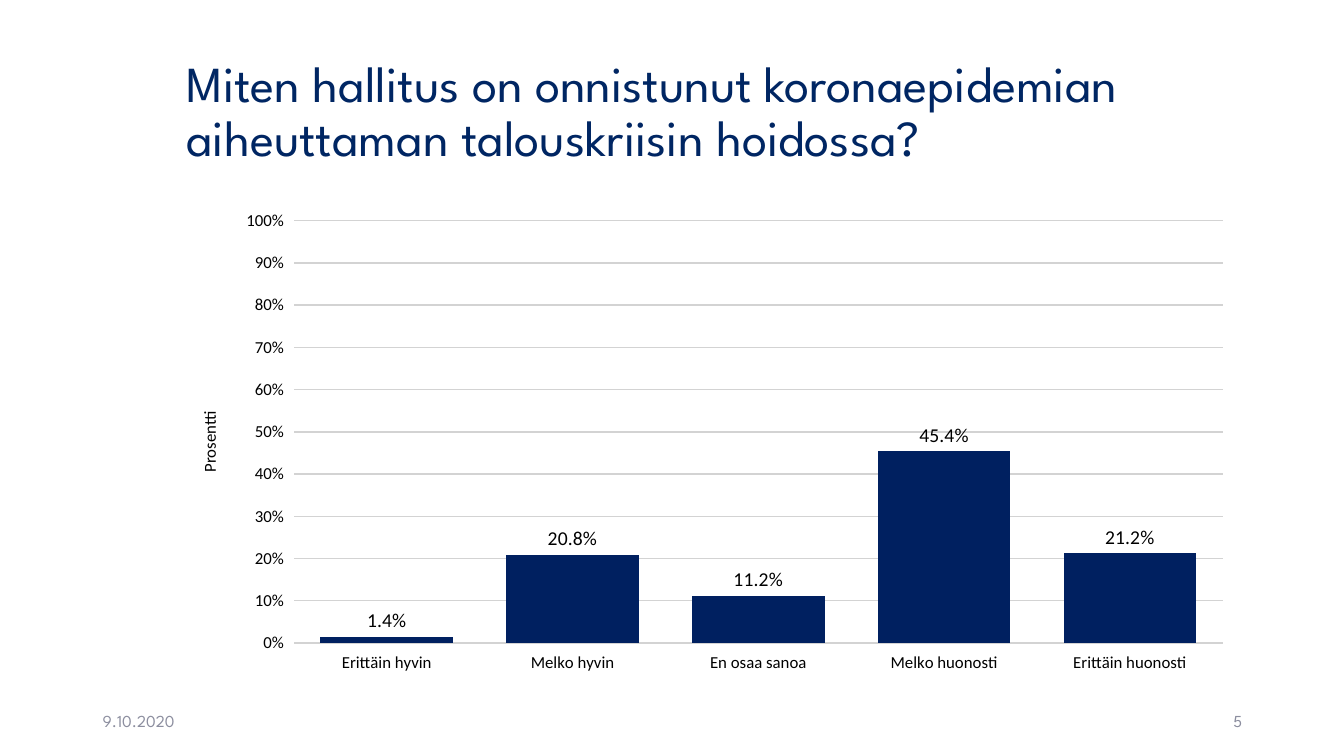
from lxml import etree
from pptx import Presentation
from pptx.chart.data import CategoryChartData
from pptx.dml.color import RGBColor
from pptx.enum import chart as charts, text as texts
from pptx.oxml import ns
from pptx.util import Inches, Pt

HEADING_FONT, CHART_FONT = "League Spartan", "Calibri"
NAVY, BAR, GREY, GRID, BLACK, WHITE = (
    "002663", "002060", "8C8E9F", "D3D3D3", "000000", "FFFFFF")
RATINGS = {
    "Erittäin hyvin": 0.014,
    "Melko hyvin": 0.208,
    "En osaa sanoa": 0.112,
    "Melko huonosti": 0.454,
    "Erittäin huonosti": 0.212,
}


def color(hex_code):
    return RGBColor.from_string(hex_code)


def style(font, size, hex_code=BLACK, name=CHART_FONT):
    font.name, font.size, font.bold = name, Pt(size), False
    font.color.rgb = color(hex_code)


def add_text(slide, box, content, size, hex_code,
             align=texts.PP_ALIGN.LEFT, line_spacing=1.0):
    shape = slide.shapes.add_textbox(*map(Inches, box))
    frame = shape.text_frame
    frame.word_wrap = True
    frame.vertical_anchor = texts.MSO_ANCHOR.MIDDLE
    paragraph = frame.paragraphs[0]
    paragraph.alignment, paragraph.line_spacing = align, line_spacing
    run = paragraph.add_run()
    run.text = content
    style(run.font, size, hex_code, HEADING_FONT)


def set_plot_area(chart, **fractions):
    """Fix the inner plot at fractions of the chart and fill it white."""
    plot_area = chart._chartSpace.chart.plotArea
    for old in plot_area.findall(ns.qn("c:layout")):
        plot_area.remove(old)
    layout = etree.Element(ns.qn("c:layout"))
    plot_area.insert(0, layout)
    manual = etree.SubElement(layout, ns.qn("c:manualLayout"))
    settings = {"layoutTarget": "inner", "xMode": "edge", "yMode": "edge", **fractions}
    for tag, value in settings.items():
        etree.SubElement(manual, ns.qn(f"c:{tag}"), val=str(value))
    properties = etree.SubElement(plot_area, ns.qn("c:spPr"))
    fill = etree.SubElement(properties, ns.qn("a:solidFill"))
    etree.SubElement(fill, ns.qn("a:srgbClr"), val=WHITE)


def add_rating_chart(slide, box):
    data = CategoryChartData(number_format="0.0%")
    data.categories = list(RATINGS)
    data.add_series("Series 1", list(RATINGS.values()))
    chart = slide.shapes.add_chart(
        charts.XL_CHART_TYPE.COLUMN_CLUSTERED, *map(Inches, box), data).chart
    chart.has_title = chart.has_legend = False
    style(chart.font, 11)

    for axis in (chart.category_axis, chart.value_axis):
        style(axis.tick_labels.font, 12)
        axis.format.line.fill.background()
        axis.major_tick_mark = charts.XL_TICK_MARK.OUTSIDE

    percent = chart.value_axis
    percent.minimum_scale, percent.maximum_scale, percent.major_unit = 0, 1, 0.1
    percent.tick_labels.number_format = "0%"
    percent.tick_labels.number_format_is_linked = False
    grid_line = percent.major_gridlines.format.line
    grid_line.color.rgb, grid_line.width = color(GRID), Pt(1)
    run = percent.axis_title.text_frame.paragraphs[0].add_run()
    run.text = "Prosentti"
    style(run.font, 12)

    plot = chart.plots[0]
    plot.gap_width, plot.vary_by_categories = 40, False
    bars = plot.series[0].format.fill
    bars.solid()
    bars.fore_color.rgb = color(BAR)
    plot.has_data_labels = True
    labels = plot.data_labels
    labels.show_value = True
    labels.number_format, labels.number_format_is_linked = "0.0%", False
    labels.position = charts.XL_LABEL_POSITION.OUTSIDE_END
    style(labels.font, 14)
    set_plot_area(chart, x=0.11, y=0.04, w=0.87, h=0.88)


def add_footer(slide, left, top, width, height):
    field = 3
    add_text(slide, (left, top, field, height), "9.10.2020", 12, GREY)
    add_text(slide, (left + width - field, top, field, height), "5", 12, GREY,
             align=texts.PP_ALIGN.RIGHT)


def main():
    presentation = Presentation()
    presentation.slide_width, presentation.slide_height = Inches(13.33), Inches(7.5)
    slide = presentation.slides.add_slide(presentation.slide_layouts[6])
    left, width = 1.75, 10.59
    add_text(slide, (left, 0.4, width, 1.45),
             "Miten hallitus on onnistunut koronaepidemian "
             "aiheuttaman talouskriisin hoidossa?", 36, NAVY, line_spacing=0.9)
    add_rating_chart(slide, (left, 2, width, 4.76))
    add_footer(slide, 0.92, 6.95, 11.5, 0.4)
    presentation.save("out.pptx")


if __name__ == "__main__":
    main()
